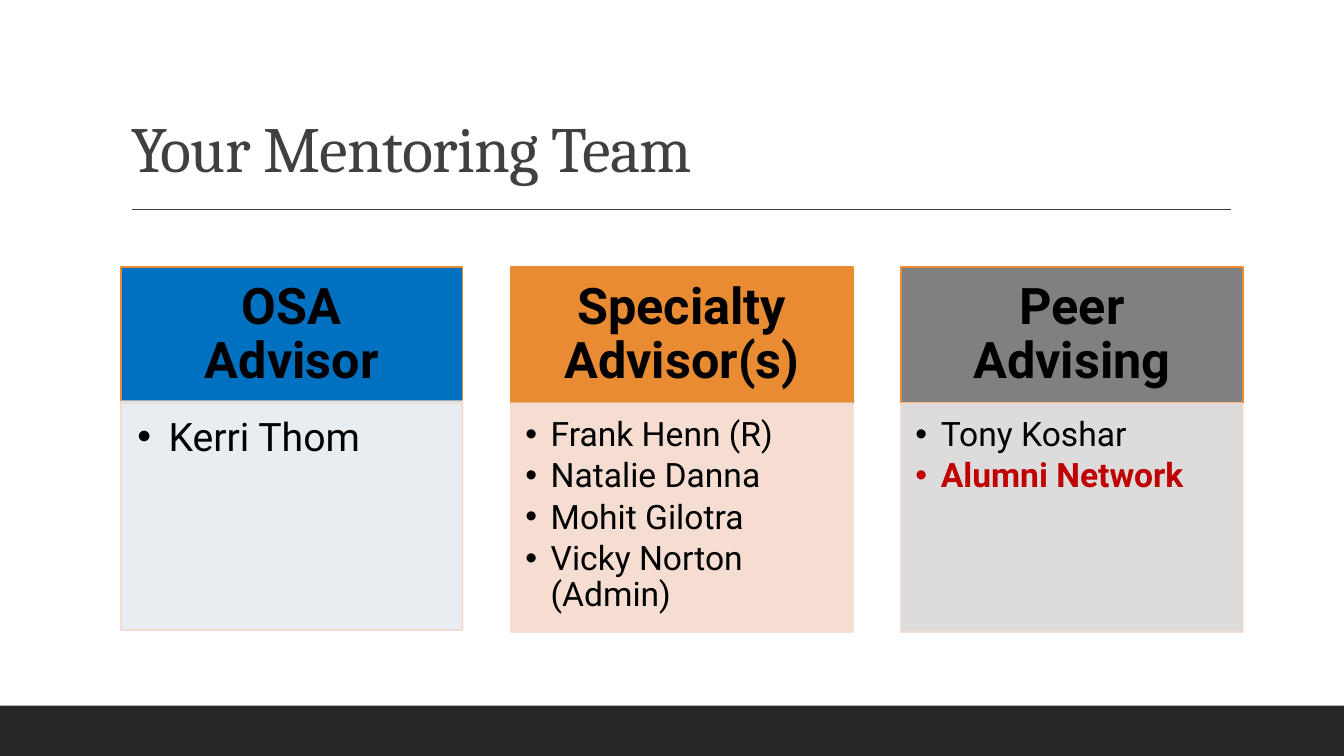
import pptx
import pptx.util
import pptx.dml.color
import pptx.enum.shapes
import pptx.enum.text
import pptx.oxml.ns
from lxml import etree

Cm, Pt = pptx.util.Cm, pptx.util.Pt
ALIGN, ANCHOR = pptx.enum.text.PP_ALIGN, pptx.enum.text.MSO_ANCHOR
qn = pptx.oxml.ns.qn
COLORS = {
    "title": "404040", "footer": "262626", "text": "000000", "highlight": "C00000",
    "blue": "0070C0", "orange": "E88B33", "gray": "808080",
    "pale blue": "E5ECF0", "pale orange": "F6DACE", "pale gray": "D9D9D9",
}


def rgb(name):
    return pptx.dml.color.RGBColor.from_string(COLORS[name])


def add_box(left, top, width, height, fill, outline=None, opacity=100):
    """Add a filled rectangle whose fill and outline share an opacity in percent."""
    shape = slide.shapes.add_shape(
        pptx.enum.shapes.MSO_SHAPE.RECTANGLE, Cm(left), Cm(top), Cm(width), Cm(height))
    shape.shadow.inherit = False
    shape.fill.solid()
    shape.fill.fore_color.rgb = rgb(fill)
    if outline:
        shape.line.color.rgb = rgb(outline)
        shape.line.width = Pt(1.25)
    else:
        shape.line.fill.background()
    if opacity < 100:
        for color in shape.element.spPr.iter(qn("a:srgbClr")):
            etree.SubElement(color, qn("a:alpha"), val=str(opacity * 1000))
    return shape


presentation = pptx.Presentation()
presentation.slide_width, presentation.slide_height = Cm(33.87), Cm(19.05)
slide = presentation.slides.add_slide(presentation.slide_layouts[5])

add_box(0, 17.78, 33.87, 1.27, "footer")

rule = slide.shapes.add_connector(
    pptx.enum.shapes.MSO_CONNECTOR.STRAIGHT, Cm(3.33), Cm(5.28), Cm(31.01), Cm(5.28))
rule.line.color.rgb = rgb("title")
rule.line.width = Pt(1)
etree.SubElement(rule.element.spPr, qn("a:effectLst"))

title = slide.shapes.title
title.left, title.top, title.width, title.height = Cm(3.05), Cm(0.79), Cm(27.94), Cm(4.04)
title.text_frame.vertical_anchor = ANCHOR.BOTTOM
title.text_frame.auto_size = pptx.enum.text.MSO_AUTO_SIZE.NONE
paragraph = title.text_frame.paragraphs[0]
paragraph.alignment = ALIGN.LEFT
paragraph.line_spacing = 0.9
run = paragraph.add_run()
run.text = "Your Mentoring Team"
for name, value in {"name": "Cambria", "size": Pt(46)}.items():
    setattr(run.font, name, value)
run.font.color.rgb = rgb("title")
for properties in title.element.iter(qn("a:rPr")):
    properties.set("spc", "-50")

# Heading, colour, body top, text size, indent, insets (left, top, right, bottom), members
small_insets = (0.36, 0.36, 0.48, 0.53)
cards = [
    ("OSA Advisor", "blue", 10.11, 28, 0.79, (0.41, 0.41, 0.56, 0.61), ["Kerri Thom"]),
    ("Specialty Advisor(s)", "orange", 10.16, 24, 0.64, small_insets,
     ["Frank Henn (R)", "Natalie Danna", "Mohit Gilotra", "Vicky Norton (Admin)"]),
    ("Peer Advising", "gray", 10.16, 24, 0.64, small_insets,
     ["Tony Koshar", "Alumni Network"]),
]
for index, (heading, color, body_top, size, indent, insets, members) in enumerate(cards):
    left = 3.05 + 9.83 * index
    header = add_box(left, 6.73, 8.61, 3.43, color, "orange")
    body = add_box(left, body_top, 8.61, 5.77, f"pale {color}", "pale orange", 90)
    blocks = [
        (header, [heading], 36, (0.75, 0.41, 0.75, 0.41), ANCHOR.MIDDLE),
        (body, members, size, insets, ANCHOR.TOP),
    ]
    for shape, lines, text_size, margins, anchor in blocks:
        frame = shape.text_frame
        frame.word_wrap = True
        frame.vertical_anchor = anchor
        for side, margin in zip(("left", "top", "right", "bottom"), margins):
            setattr(frame, f"margin_{side}", Cm(margin))
        for number, line in enumerate(lines):
            paragraph = frame.paragraphs[0] if number == 0 else frame.add_paragraph()
            paragraph.alignment = ALIGN.CENTER if shape is header else ALIGN.LEFT
            paragraph.line_spacing = 0.9
            if shape is body:
                paragraph.space_after = Pt(3.6)
                properties = paragraph._p.get_or_add_pPr()
                properties.set("marL", str(Cm(indent)))
                properties.set("indent", str(-Cm(indent)))
                etree.SubElement(properties, qn("a:buFont"), typeface="Arial")
                etree.SubElement(properties, qn("a:buChar"), char="•")
            highlighted = line == "Alumni Network"
            run = paragraph.add_run()
            run.text = line
            text_format = {"name": "Roboto", "size": Pt(text_size),
                           "bold": shape is header or highlighted}
            for name, value in text_format.items():
                setattr(run.font, name, value)
            run.font.color.rgb = rgb("highlight" if highlighted else "text")

presentation.save("out.pptx")
